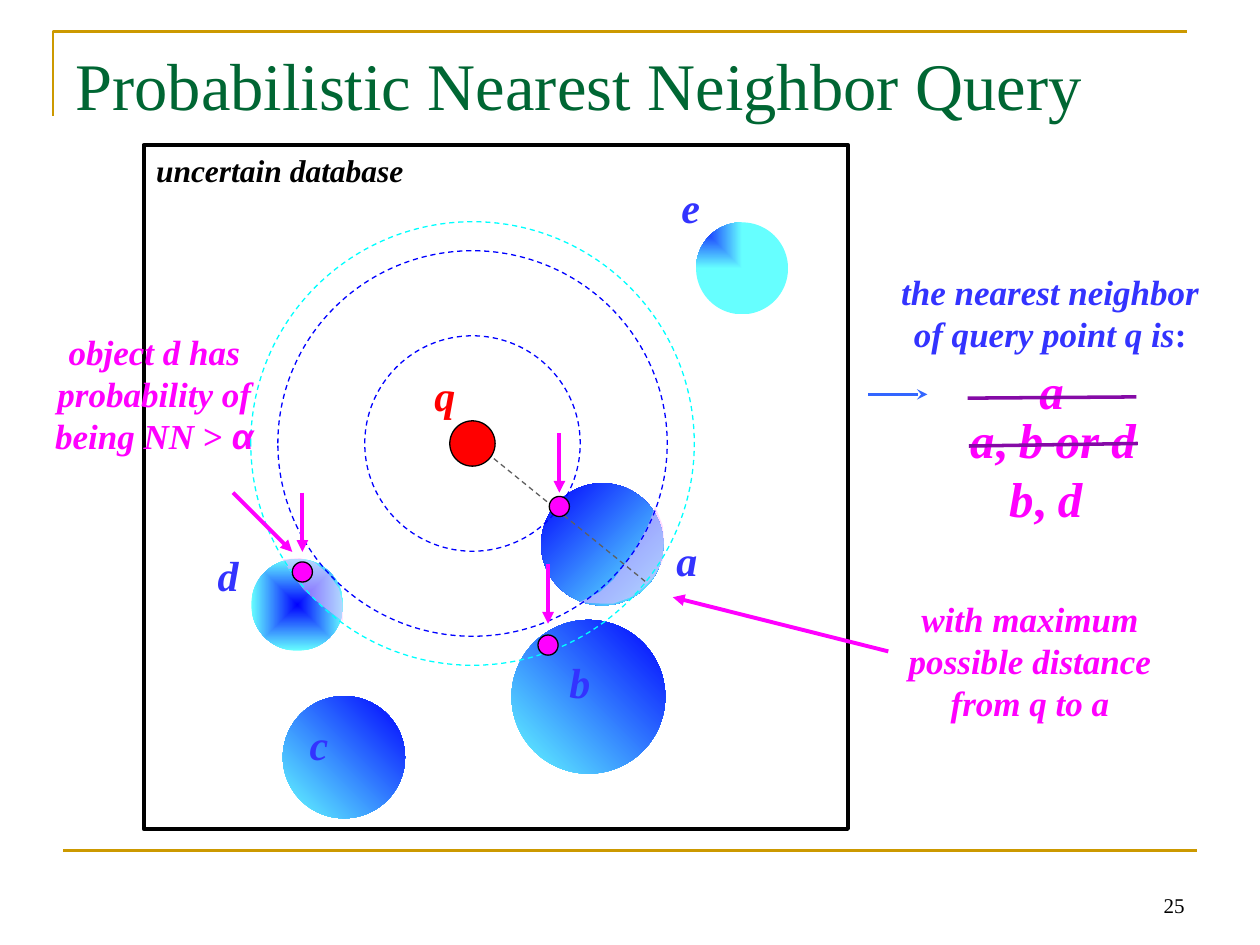
from collections import namedtuple

from lxml import etree
from pptx import Presentation
from pptx.dml.color import RGBColor
from pptx.enum.dml import MSO_LINE
from pptx.enum.shapes import MSO_CONNECTOR, MSO_SHAPE
from pptx.enum.text import MSO_ANCHOR, MSO_AUTO_SIZE, PP_ALIGN
from pptx.oxml import parse_xml
from pptx.oxml.ns import nsdecls, qn
from pptx.util import Inches, Pt

BLACK = RGBColor(0x00, 0x00, 0x00)
GOLD = RGBColor(0xCC, 0x99, 0x00)
GREEN = RGBColor(0x00, 0x66, 0x33)
RED = RGBColor(0xFF, 0x00, 0x00)
BLUE = RGBColor(0x00, 0x00, 0xFF)
LABEL_BLUE = RGBColor(0x33, 0x33, 0xFF)
ARROW_BLUE = RGBColor(0x33, 0x66, 0xFF)
CYAN = RGBColor(0x00, 0xFF, 0xFF)
LIGHT_CYAN = RGBColor(0x66, 0xFF, 0xFF)
MAGENTA = RGBColor(0xFF, 0x00, 0xFF)
PINK = RGBColor(0xFF, 0xB7, 0xFF)
PURPLE = RGBColor(0x85, 0x0A, 0xA6)
GRAY = RGBColor(0x5F, 0x5F, 0x5F)
SERIF = "Times New Roman"

Box = namedtuple("Box", "left top width height")
Run = namedtuple("Run", "text italic font", defaults=(True, SERIF))

RISING = '<a:lin ang="18900000" scaled="0"/>'
FALLING = '<a:lin ang="2700000" scaled="0"/>'
FROM_CENTER = '<a:path path="shape"><a:fillToRect l="50000" t="50000" r="50000" b="50000"/></a:path>'
FROM_CORNER = '<a:path path="rect"><a:fillToRect r="100000" b="100000"/></a:path>'


def style_line(line, color, width, dashed=False):
    line.color.rgb = color
    line.width = Pt(width)
    if dashed:
        line.dash_style = MSO_LINE.DASH


def add_text(slide, box, x, y, width, height, runs, size, color, bold=True,
             align=PP_ALIGN.LEFT, wrap=True, grow=True, anchor=MSO_ANCHOR.TOP):
    shape = slide.shapes.add_textbox(
        Inches(box.left + x), Inches(box.top + y), Inches(width), Inches(height))
    frame = shape.text_frame
    frame.word_wrap = wrap
    frame.auto_size = MSO_AUTO_SIZE.SHAPE_TO_FIT_TEXT if grow else MSO_AUTO_SIZE.NONE
    frame.vertical_anchor = anchor
    paragraph = frame.paragraphs[0]
    paragraph.alignment = align
    for part in runs:
        run = paragraph.add_run()
        run.text = part.text
        run.font.name = part.font
        run.font.size = Pt(size)
        run.font.bold = bold
        run.font.italic = part.italic
        run.font.color.rgb = color


def add_line(slide, box, start, end, color, width, head=None, dashed=False):
    connector = slide.shapes.add_connector(
        MSO_CONNECTOR.STRAIGHT,
        Inches(box.left + start[0]), Inches(box.top + start[1]),
        Inches(box.left + end[0]), Inches(box.top + end[1]))
    style_line(connector.line, color, width, dashed)
    if head:
        etree.SubElement(connector.line._get_or_add_ln(), qn("a:tailEnd"), type=head)
    etree.SubElement(connector._element.spPr, qn("a:effectLst"))


def add_ellipse(slide, box, center, radius_x, radius_y=None):
    radius_y = radius_y or radius_x
    shape = slide.shapes.add_shape(
        MSO_SHAPE.OVAL,
        Inches(box.left + center[0] - radius_x), Inches(box.top + center[1] - radius_y),
        Inches(2 * radius_x), Inches(2 * radius_y))
    shape.shadow.inherit = False
    return shape


def add_dot(slide, box, center, radius, color):
    shape = add_ellipse(slide, box, center, radius)
    shape.fill.solid()
    shape.fill.fore_color.rgb = color
    style_line(shape.line, BLACK, 0.75)


def add_ring(slide, box, center, radius_x, radius_y, color):
    shape = add_ellipse(slide, box, center, radius_x, radius_y)
    shape.fill.background()
    style_line(shape.line, color, 0.75, dashed=True)


def add_disk(slide, box, center, radius, first, last, direction):
    shape = add_ellipse(slide, box, center, radius)
    shape.line.fill.background()
    gradient = parse_xml(
        f'<a:gradFill {nsdecls("a")} rotWithShape="1"><a:gsLst>'
        f'<a:gs pos="0"><a:srgbClr val="{first}"/></a:gs>'
        f'<a:gs pos="100000"><a:srgbClr val="{last}"/></a:gs>'
        f'</a:gsLst>{direction}</a:gradFill>')
    shape._element.spPr.find(qn("a:prstGeom")).addnext(gradient)


def add_outline(slide, box, points, closed):
    corners = [(Inches(box.left + x), Inches(box.top + y)) for x, y in points]
    builder = slide.shapes.build_freeform(*corners[0])
    builder.add_line_segments(corners[1:], close=closed)
    shape = builder.convert_to_shape()
    shape.shadow.inherit = False
    return shape


def add_lens(slide, box, points):
    shape = add_outline(slide, box, points, closed=True)
    shape.fill.solid()
    shape.fill.fore_color.rgb = PINK
    shape.line.fill.background()
    color = shape._element.spPr.find(".//" + qn("a:srgbClr"))
    etree.SubElement(color, qn("a:alpha"), val="50000")


def draw_frame(slide, box):
    # Corner rule, bottom rule, title and page number
    corner = add_outline(slide, box, [(0.42, 0.92), (0.42, 0.25), (9.42, 0.25)], closed=False)
    corner.fill.background()
    style_line(corner.line, GOLD, 1.5)
    add_line(slide, box, (0.5, 6.75), (9.5, 6.75), GOLD, 1.5)
    add_text(slide, box, 0.5, 0.3, 9, 1.25, [Run("Probabilistic Nearest Neighbor Query", False)],
             38, GREEN, bold=False, grow=False)
    add_text(slide, box, 7.17, 6.83, 2.33, 0.5, [Run("25", False)], 12, BLACK, bold=False,
             align=PP_ALIGN.RIGHT, grow=False, anchor=MSO_ANCHOR.BOTTOM)


def draw_database(slide, box):
    border = slide.shapes.add_shape(MSO_SHAPE.RECTANGLE, *[Inches(length) for length in box])
    border.shadow.inherit = False
    border.fill.background()
    style_line(border.line, BLACK, 2.25)
    add_text(slide, box, 0, 0, 3.4, 0.4, [Run("uncertain database")], 18, BLACK)

    # Uncertain objects
    for center, radius, first, last, direction in [
            ((3.64, 3.17), 0.485, BLUE, LIGHT_CYAN, FALLING),
            ((3.53, 4.38), 0.61, LIGHT_CYAN, BLUE, RISING),
            ((1.59, 4.86), 0.485, LIGHT_CYAN, BLUE, RISING),
            ((1.22, 3.65), 0.365, BLUE, LIGHT_CYAN, FROM_CENTER),
            ((4.75, 0.98), 0.365, BLUE, LIGHT_CYAN, FROM_CORNER)]:
        add_disk(slide, box, center, radius, first, last, direction)

    # Parts of a and d cut off by the middle ring
    add_lens(slide, box, [
        (3.46, 3.63), (3.62, 3.55), (3.73, 3.45), (3.89, 3.23), (4, 3.03),
        (4.06, 2.87), (4.12, 3.02), (4.13, 3.14), (4.12, 3.3), (4.05, 3.43),
        (3.97, 3.51), (3.87, 3.59), (3.73, 3.64), (3.62, 3.64)])
    add_lens(slide, box, [
        (1.1, 3.29), (1.24, 3.28), (1.35, 3.31), (1.47, 3.41), (1.55, 3.52), (1.58, 3.64),
        (1.58, 3.78), (1.46, 3.69), (1.37, 3.62), (1.27, 3.53), (1.18, 3.41)])

    # Query point with its distance rings
    query = (2.61, 2.37)
    add_dot(slide, box, query, 0.18, RED)
    for radius_x, radius_y, color in [
            (0.855, 0.855, BLUE), (1.76, 1.76, CYAN), (1.545, 1.53, BLUE)]:
        add_ring(slide, box, query, radius_x, radius_y, color)
    add_line(slide, box, (2.78, 2.49), (4, 3.48), GRAY, 0.75, dashed=True)

    # Nearest points, each with an arrow from above
    for center, arrow_top in [((3.3, 2.87), 2.29), ((3.21, 3.97), 3.33), ((1.26, 3.39), 2.76)]:
        add_dot(slide, box, center, 0.08, MAGENTA)
        add_line(slide, box, (center[0], arrow_top), (center[0], arrow_top + 0.47),
                 MAGENTA, 2.25, "triangle")

    # Object names
    for name, x, y, color in [
            ("q", 2.21, 1.73, RED), ("a", 4.13, 3.04, LABEL_BLUE), ("b", 3.28, 4.01, LABEL_BLUE),
            ("c", 1.22, 4.5, LABEL_BLUE), ("d", 0.49, 3.16, LABEL_BLUE),
            ("e", 4.17, 0.24, LABEL_BLUE)]:
        add_text(slide, box, x, y, 0.36, 0.5, [Run(name)], 24, color, wrap=False)


def draw_answers(slide, box):
    add_text(slide, box, 0.16, 0, box.width, 0.77,
             [Run("the nearest neighbor of query point q is"), Run(":", False)],
             20, LABEL_BLUE, align=PP_ALIGN.CENTER)
    add_line(slide, box, (0.08, 1.03), (0.55, 1.03), ARROW_BLUE, 1.75, "stealth")

    # Answers, the first two struck out
    for x, y, width, runs in [
            (1.34, 0.71, 0.4, [Run("a")]),
            (0.79, 1.1, 1.52, [Run("a"), Run(", ", False), Run("b or d")]),
            (1.1, 1.57, 0.78, [Run("b"), Run(",", False), Run(" d")])]:
        add_text(slide, box, x, y, width, 0.57, runs, 28, MAGENTA, wrap=False)
    add_line(slide, box, (0.87, 1.06), (2.21, 1.05), PURPLE, 2)
    add_line(slide, box, (0.88, 1.44), (2.22, 1.42), PURPLE, 2)


def draw_note(slide, box, runs, arrow_start, arrow_end):
    add_text(slide, box, 0, 0, box.width, box.height, runs, 20, MAGENTA, align=PP_ALIGN.CENTER)
    add_line(slide, box, arrow_start, arrow_end, MAGENTA, 2.25, "triangle")


def main():
    presentation = Presentation()
    presentation.slide_width = Inches(10)
    presentation.slide_height = Inches(7.5)
    slide = presentation.slides.add_slide(presentation.slide_layouts[6])
    draw_frame(slide, Box(0, 0, 10, 7.5))
    draw_database(slide, Box(1.14, 1.15, 5.59, 5.43))
    draw_answers(slide, Box(6.81, 2.1, 2.73, 2.14))
    draw_note(slide, Box(6.81, 4.69, 2.73, 1.1),
              [Run("with maximum possible distance from q to a")], (0.24, 0.48), (-1.47, 0.05))
    draw_note(slide, Box(0.2, 2.57, 2.05, 1.1),
              [Run("object d has probability of being NN"), Run(" > ", False),
               Run("α", True, "Arial")], (1.65, 1.34), (2.12, 1.81))
    presentation.save("out.pptx")


if __name__ == "__main__":
    main()
